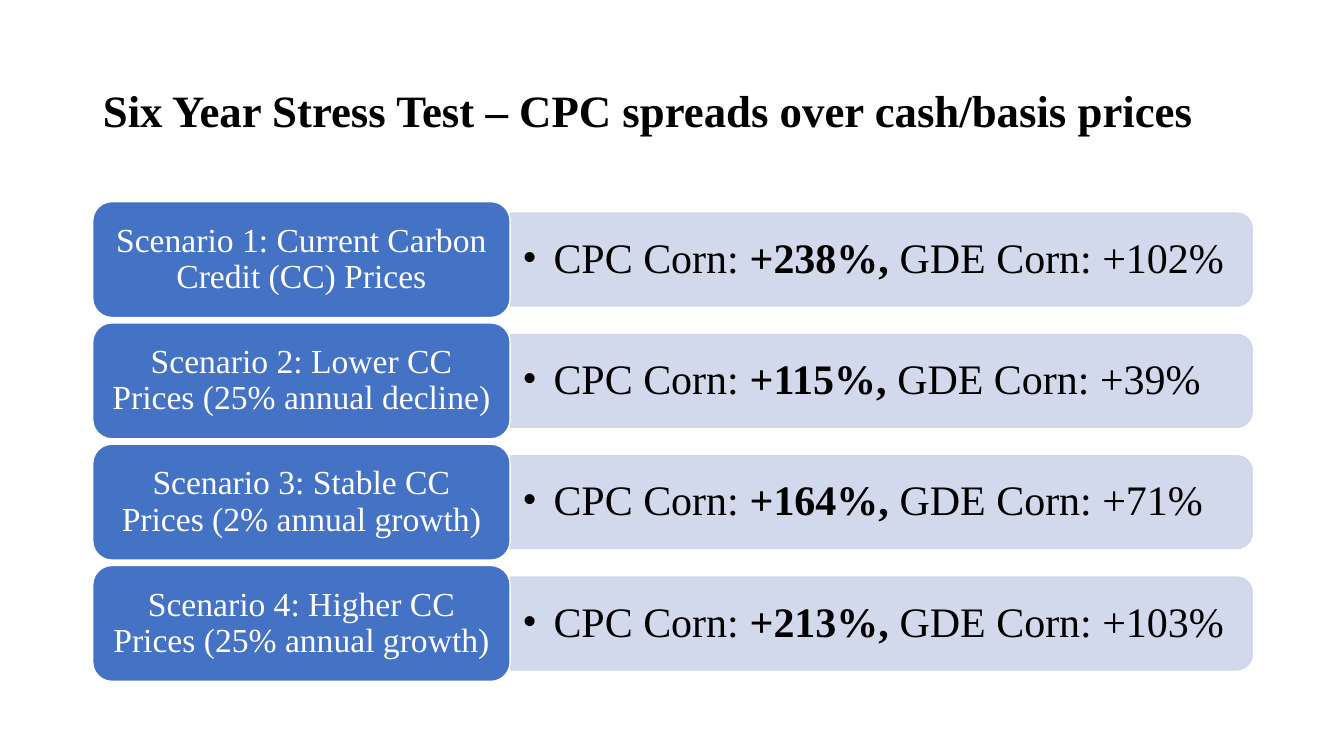
from pptx import Presentation
from pptx.dml.color import RGBColor
from pptx.enum.shapes import MSO_SHAPE
from pptx.enum.text import MSO_ANCHOR, MSO_AUTO_SIZE, PP_ALIGN
from pptx.oxml.ns import qn
from pptx.util import Inches, Pt
from lxml.etree import SubElement

FONT = "Times New Roman"
INK = {"text": "000000", "label": "4472C4", "bar": "CFD5EA", "white": "FFFFFF"}
ROWS = [
    ("Scenario 1: Current Carbon Credit (CC) Prices", "+238%, ", "+102%"),
    ("Scenario 2: Lower CC Prices (25% annual decline)", "+115%, ", "+39%"),
    ("Scenario 3: Stable CC Prices (2% annual growth)", "+164%, ", "+71%"),
    ("Scenario 4: Higher CC Prices (25% annual growth)", "+213%, ", "+103%"),
]

# Grid in inches: label column, bar column, row pitch
LEFT, TOP, PITCH = 0.92, 2, 3.61 / 3
LABEL_W, LABEL_H = 4.14, 1.15
BAR_X, BAR_W, BAR_H = LEFT + LABEL_W, 7.36, 0.92
TEXT_W, TEXT_H = 7.32, 0.83


def write(shape, runs, size, color, align):
    frame = shape.text_frame
    look = {"word_wrap": True, "auto_size": MSO_AUTO_SIZE.NONE,
            "vertical_anchor": MSO_ANCHOR.MIDDLE}
    for key, value in look.items():
        setattr(frame, key, value)
    para = frame.paragraphs[0]
    para.alignment, para.line_spacing = align, 0.9
    for text, bold in runs:
        run = para.add_run()
        run.text = text
        face = {"name": FONT, "size": Pt(size), "bold": bold}
        for key, value in face.items():
            setattr(run.font, key, value)
        run.font.color.rgb = RGBColor.from_string(INK[color])
    return para


def block(kind, x, y, w, h, fill, line):
    shape = slide.shapes.add_shape(kind, *map(Inches, (x, y, w, h)))
    shape.shadow.inherit = False
    shape.fill.solid()
    shape.fill.fore_color.rgb = RGBColor.from_string(INK[fill])
    shape.line.color.rgb = RGBColor.from_string(INK[line])
    shape.line.width = Pt(1)
    return shape


deck = Presentation()
deck.slide_width, deck.slide_height = Inches(13.33), Inches(7.5)
slide = deck.slides.add_slide(deck.slide_layouts[5])

# Title
title = slide.shapes.title
place = {"left": LEFT, "top": 0.4, "width": 11.5, "height": 1.45}
for key, value in place.items():
    setattr(title, key, Inches(value))
write(title, [("Six Year Stress Test – CPC spreads over cash/basis prices", True)],
      32, "text", PP_ALIGN.LEFT)

# Scenario rows
for i, (name, cpc, rival) in enumerate(ROWS):
    y = TOP + i * PITCH
    mid = y + LABEL_H / 2

    # Bar: an upright shape turned so its round corners face right
    bar = block(MSO_SHAPE.ROUND_2_SAME_RECTANGLE, BAR_X + (BAR_W - BAR_H) / 2,
                mid - BAR_W / 2, BAR_H, BAR_W, "bar", "bar")
    bar.rotation = 90
    for tint in bar._element.spPr.iter(qn("a:srgbClr")):
        SubElement(tint, qn("a:alpha"), val="90000")

    # Bulleted spreads
    box = slide.shapes.add_textbox(*map(Inches, (BAR_X, mid - TEXT_H / 2, TEXT_W, TEXT_H)))
    pad = {"left": 0.12, "top": 0.06, "right": 0.12, "bottom": 0.06}
    for side, value in pad.items():
        setattr(box.text_frame, "margin_" + side, Inches(value))
    para = write(box, [("CPC Corn: ", False), (cpc, True), ("GDE Corn: " + rival, False)],
                 30, "text", PP_ALIGN.LEFT)
    para.level = 1
    props = para._p.get_or_add_pPr()
    props.set("marL", str(Inches(0.31)))
    props.set("indent", str(-Inches(0.31)))
    SubElement(props, qn("a:buFont"), typeface=FONT)
    SubElement(props, qn("a:buChar"), char="•")

    # Scenario label
    label = block(MSO_SHAPE.ROUNDED_RECTANGLE, LEFT, y, LABEL_W, LABEL_H, "label", "white")
    write(label, [(name, False)], 24, "white", PP_ALIGN.CENTER)

deck.save("out.pptx")
